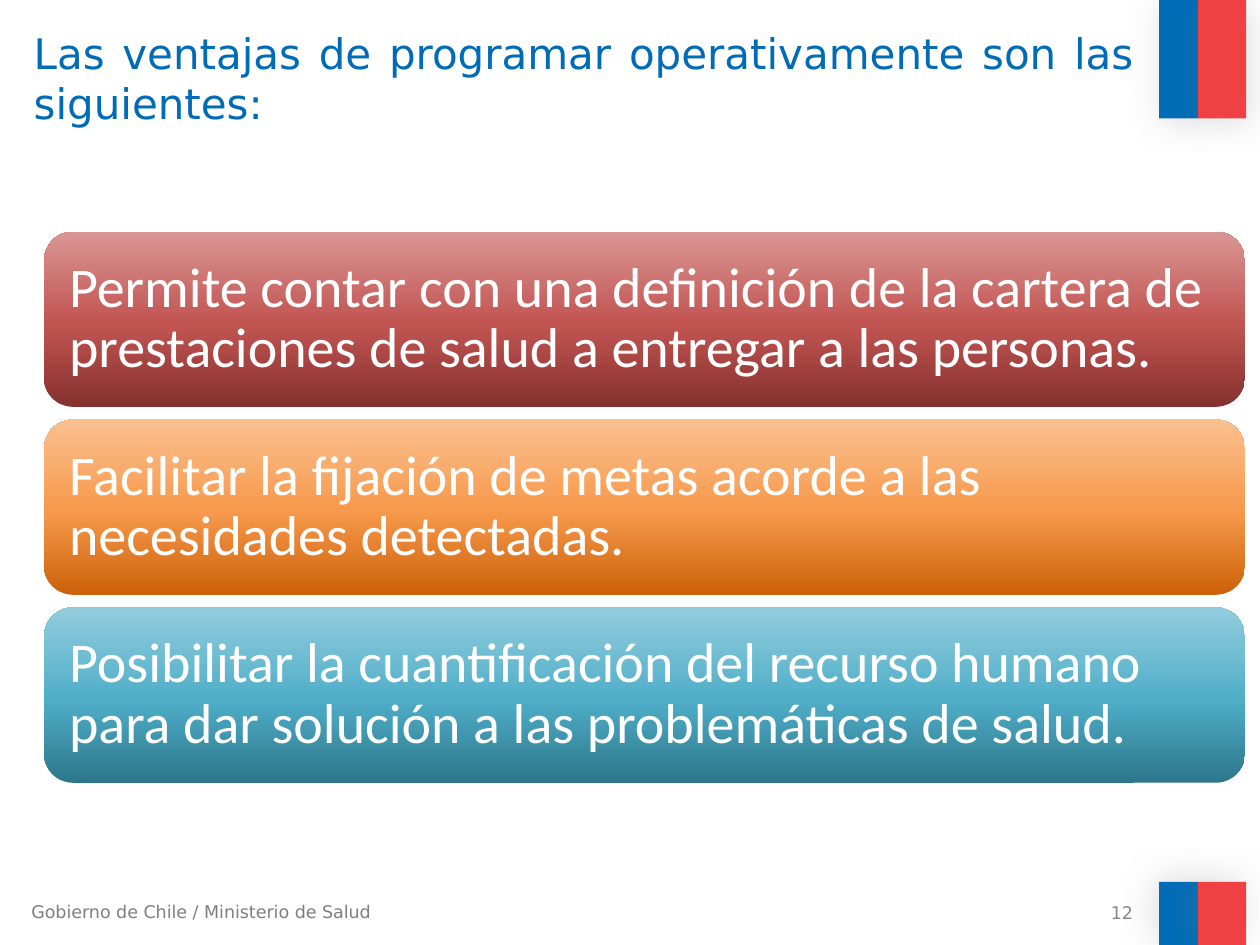
from copy import deepcopy
from lxml.etree import SubElement
from pptx import Presentation
from pptx.dml.color import RGBColor
from pptx.enum.shapes import MSO_SHAPE as Preset
from pptx.enum.text import MSO_ANCHOR as Anchor, PP_ALIGN as Align
from pptx.oxml.ns import qn
from pptx.util import Pt

TITLE = "Las ventajas de programar operativamente son las siguientes:"
FOOTER = "Gobierno de Chile / Ministerio de Salud"
PAGE = "12"
ADVANTAGES = [
    ("Permite contar con una definición de la cartera de prestaciones de salud a entregar a las personas.",
     ("85312F", "C25552", "D99694")),
    ("Facilitar la fijación de metas acorde a las necesidades detectadas.",
     ("CC6109", "F7994C", "FAC090")),
    ("Posibilitar la cuantificación del recurso humano para dar solución a las problemáticas de salud.",
     ("2C778B", "50AEC8", "93CDDD")),
]
STOPS = (0, 0.48, 1)
FLAG_STRIPES = [(662.4, 22.3, "006CB7"), (684.7, 27.4, "EF4144")]
FLAG_BANDS = [(0, 67.7, 45), (504, 36, 215)]
SHADOW = {"blurRad": 20, "dist": 3}
CARD_LEFT, CARD_TOP, CARD_WIDTH, CARD_HEIGHT, CARD_PITCH = 25.2, 132.3, 686.2, 100.2, 107.4

TITLE_FONT = {"name": "DejaVu Sans", "size": Pt(24), "color": "006CB7"}
FOOTER_FONT = {"name": "DejaVu Sans", "size": Pt(10), "color": "7F7F7F"}
PAGE_FONT = {**FOOTER_FONT, "color": "898989"}
CARD_FONT = {"name": "Calibri", "size": Pt(32), "color": "FFFFFF"}
CARD_FRAME = {"vertical_anchor": Anchor.MIDDLE, "margin_left": Pt(9.4), "margin_right": Pt(9.4),
              "margin_top": Pt(9.4), "margin_bottom": Pt(9.4)}


def paint(color, value):
    color.rgb = RGBColor.from_string(value)


def write(shape, wording, font, frame=None, paragraph=None):
    body = shape.text_frame
    body.word_wrap = True
    body.text = wording
    line = body.paragraphs[0]
    run_font = line.runs[0].font
    settings = [(body, frame or {}), (line, paragraph or {}),
                (run_font, {key: font[key] for key in ("name", "size")})]
    for target, values in settings:
        for key, value in values.items():
            setattr(target, key, value)
    paint(run_font.color, font["color"])


def add_block(slide, preset, box):
    block = slide.shapes.add_shape(preset, *map(Pt, box))
    block.shadow.inherit = False
    block.line.fill.background()
    return block


def add_stripe(slide, box, color, direction):
    stripe = add_block(slide, Preset.RECTANGLE, box)
    stripe.fill.solid()
    paint(stripe.fill.fore_color, color)
    effects = stripe._element.spPr.find(qn("a:effectLst"))
    shadow = SubElement(effects, qn("a:outerShdw"), dir=str(direction * 60000), rotWithShape="0")
    for key, value in SHADOW.items():
        shadow.set(key, str(Pt(value)))
    tone = SubElement(shadow, qn("a:srgbClr"), val="808080")
    SubElement(tone, qn("a:alpha"), val="25000")


def add_card(slide, box, wording, colors):
    card = add_block(slide, Preset.ROUNDED_RECTANGLE, box)
    card.fill.gradient()
    card.fill.gradient_angle = 90
    stop_list = card._element.spPr.find(qn("a:gradFill")).find(qn("a:gsLst"))
    stop_list.append(deepcopy(stop_list[-1]))
    for stop, position, color in zip(card.fill.gradient_stops, STOPS, colors):
        stop.position = position
        paint(stop.color, color)
    write(card, wording, CARD_FONT, CARD_FRAME, {"alignment": Align.LEFT, "line_spacing": 0.9})


def add_text(slide, box, *content):
    write(slide.shapes.add_textbox(*map(Pt, box)), *content)


def main():
    deck = Presentation()
    deck.slide_width, deck.slide_height = Pt(720), Pt(540)
    slide = deck.slides.add_slide(deck.slide_layouts[6])
    for top, height, direction in FLAG_BANDS:
        for left, width, color in FLAG_STRIPES:
            add_stripe(slide, (left, top, width, height), color, direction)
    add_text(slide, (10.8, 511.2, 217.4, 19.4), FOOTER, FOOTER_FONT)
    add_text(slide, (12.2, 12.2, 643, 90), TITLE, TITLE_FONT, None, {"alignment": Align.JUSTIFY})
    for index, (wording, colors) in enumerate(ADVANTAGES):
        top = CARD_TOP + index * CARD_PITCH
        add_card(slide, (CARD_LEFT, top, CARD_WIDTH, CARD_HEIGHT), wording, colors)
    add_text(slide, (486.7, 514.1, 167.8, 15.1), PAGE, PAGE_FONT,
             {"vertical_anchor": Anchor.MIDDLE}, {"alignment": Align.RIGHT})
    deck.save("out.pptx")


if __name__ == "__main__":
    main()
